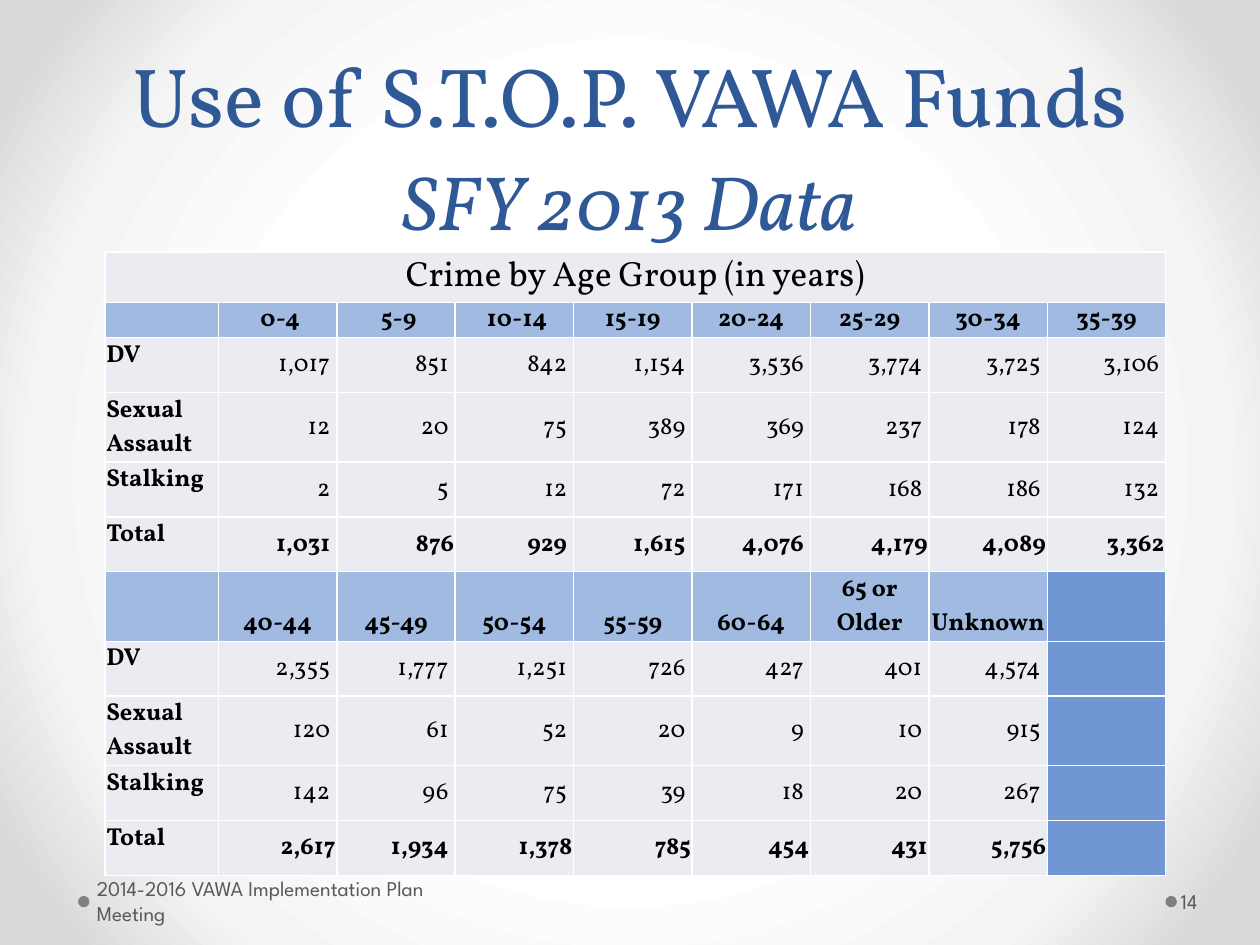
import lxml.etree
import pptx
import pptx.dml.color
import pptx.enum.shapes
import pptx.enum.text
import pptx.oxml.ns
import pptx.util

Pt = pptx.util.Pt
qn = pptx.oxml.ns.qn
ALIGN = pptx.enum.text.PP_ALIGN
ANCHOR = pptx.enum.text.MSO_ANCHOR

SERIF, SANS = "Vollkorn", "League Spartan"
BLUE, GREY, DOT = "2F5897", "595959", "808080"
HEAD, BODY, UNUSED = "A0BAE1", "EAECF2", "7097D3"
GRADIENT = [(50, "FFFFFF"), (76, "F4F4F4"), (92, "DADADA")]

TITLE = ["Use of S.T.O.P. VAWA Funds", "SFY 2013 Data"]
FOOTER = "2014-2016 VAWA Implementation Plan Meeting"
PAGE_NUMBER = "14"
CAPTION = "Crime by Age Group (in years)"
GROUPS = [
    {
        "ages": ["0-4", "5-9", "10-14", "15-19", "20-24", "25-29", "30-34", "35-39"],
        "rows": [
            ("DV", ["1,017", "851", "842", "1,154", "3,536", "3,774", "3,725", "3,106"]),
            ("Sexual Assault", ["12", "20", "75", "389", "369", "237", "178", "124"]),
            ("Stalking", ["2", "5", "12", "72", "171", "168", "186", "132"]),
            ("Total", ["1,031", "876", "929", "1,615", "4,076", "4,179", "4,089", "3,362"]),
        ],
        "shifted_ages": {1, 2, 3},
        "flush_totals": {2, 6, 7, 8},
    },
    {
        "ages": ["40-44", "45-49", "50-54", "55-59", "60-64", "65 or Older", "Unknown"],
        "rows": [
            ("DV", ["2,355", "1,777", "1,251", "726", "427", "401", "4,574"]),
            ("Sexual Assault", ["120", "61", "52", "20", "9", "10", "915"]),
            ("Stalking", ["142", "96", "75", "39", "18", "20", "267"]),
            ("Total", ["2,617", "1,934", "1,378", "785", "454", "431", "5,756"]),
        ],
        "shifted_ages": set(),
        "flush_totals": {1, 3, 4, 5, 6, 7},
    },
]
COLUMNS = [64.8] + [67.68] * 8
ONE_LINE, TWO_LINES = 31.3, 39.8
CRIME_ROWS = [ONE_LINE, TWO_LINES, ONE_LINE, ONE_LINE]
ROWS = [28.8, 20.2] + CRIME_ROWS + [TWO_LINES] + CRIME_ROWS
EDGE, INDENT = 0.72, 3.8


def color(value):
    """Turn a hex string into a colour."""
    return pptx.dml.color.RGBColor.from_string(value)


def add_span(para, text, size=14, font=SERIF, fill="000000", bold=False, italic=False):
    """Add one formatted run of text to a paragraph."""
    span = para.add_run()
    span.text = text
    span.font.size, span.font.name = Pt(size), font
    span.font.bold, span.font.italic = bold, italic
    span.font.color.rgb = color(fill)


def add_box(page, left, top, width, height, margins, anchor):
    """Add a wrapping text box and return its first paragraph."""
    frame = page.shapes.add_textbox(Pt(left), Pt(top), Pt(width), Pt(height)).text_frame
    frame.word_wrap, frame.vertical_anchor = True, anchor
    frame.margin_left, frame.margin_top, frame.margin_right, frame.margin_bottom = map(Pt, margins)
    return frame.paragraphs[0]


def add_dot(page, left, top):
    """Add a small footer dot."""
    dot = page.shapes.add_shape(
        pptx.enum.shapes.MSO_SHAPE.OVAL, Pt(left), Pt(top), Pt(6.5), Pt(6.5))
    dot.shadow.inherit = False
    dot.fill.solid()
    dot.fill.fore_color.rgb = color(DOT)
    dot.line.fill.background()


def paint_background(page):
    """Give the page a round gradient that darkens outwards."""
    add = lxml.etree.SubElement
    page.background.fill.gradient()
    gradient = page.background._cSld.find(".//" + qn("a:gradFill"))
    for child in list(gradient):
        gradient.remove(child)
    stops = add(gradient, qn("a:gsLst"))
    for position, shade in GRADIENT:
        stop = add(stops, qn("a:gs"), pos=str(position * 1000))
        add(stop, qn("a:srgbClr"), val=shade)
    shape = add(gradient, qn("a:path"), {"path": "circle"})
    add(shape, qn("a:fillToRect"), {side: "50000" for side in "ltrb"})


def format_cell(cell, fill):
    """Set a cell's fill, tight margins and thin white borders."""
    cell.fill.solid()
    cell.fill.fore_color.rgb = color(fill)
    cell.margin_left = cell.margin_right = cell.margin_top = Pt(EDGE)
    cell.margin_bottom = Pt(0)
    properties = cell._tc.get_or_add_tcPr()
    for index, side in enumerate("LRTB"):
        border = lxml.etree.Element(qn("a:ln" + side), w=str(Pt(1)))
        paint = lxml.etree.SubElement(border, qn("a:solidFill"))
        lxml.etree.SubElement(paint, qn("a:srgbClr"), val="FFFFFF")
        properties.insert(index, border)


def fill_cell(cell, text, align, anchor, left=EDGE, right=EDGE, **style):
    """Write text into a formatted cell."""
    cell.margin_left, cell.margin_right = Pt(left), Pt(right)
    cell.vertical_anchor = anchor
    para = cell.text_frame.paragraphs[0]
    para.alignment = align
    add_span(para, text, **style)


def fill_group(table, start, group):
    """Write one header row of ages and the crime rows below it."""
    for column, age in enumerate(group["ages"], 1):
        left = INDENT if column in group["shifted_ages"] else EDGE
        fill_cell(table.cell(start, column), age, ALIGN.CENTER, ANCHOR.BOTTOM,
                  left=left, bold=True)
    for row, (crime, counts) in enumerate(group["rows"], start + 1):
        total = crime == "Total"
        fill_cell(table.cell(row, 0), crime, ALIGN.LEFT, ANCHOR.TOP, bold=True)
        for column, count in enumerate(counts, 1):
            flush = total and column in group["flush_totals"]
            fill_cell(table.cell(row, column), count, ALIGN.RIGHT, ANCHOR.MIDDLE,
                      right=EDGE if flush else INDENT, bold=total)


def add_crime_table(page):
    """Add the table of crimes by age group."""
    table = page.shapes.add_table(
        len(ROWS), len(COLUMNS), Pt(60), Pt(144), Pt(sum(COLUMNS)), Pt(sum(ROWS))).table
    table.first_row = table.horz_banding = False
    for column, width in zip(table.columns, COLUMNS):
        column.width = Pt(width)
    for row, height in zip(table.rows, ROWS):
        row.height = Pt(height)
    starts = [1, 6]
    for row in range(len(ROWS)):
        for column in range(len(COLUMNS)):
            unused = row >= starts[1] and column == len(COLUMNS) - 1
            fill = UNUSED if unused else HEAD if row in starts else BODY
            format_cell(table.cell(row, column), fill)
    table.cell(0, 0).merge(table.cell(0, len(COLUMNS) - 1))
    fill_cell(table.cell(0, 0), CAPTION, ALIGN.CENTER, ANCHOR.BOTTOM, size=20)
    for start, group in zip(starts, GROUPS):
        fill_group(table, start, group)
    for cell in table.iter_cells():
        if not cell.text_frame.text:
            para = cell.text_frame.paragraphs[0]
            lxml.etree.SubElement(para._p, qn("a:endParaRPr"), sz="1400")


def main():
    """Build the slide and save it."""
    deck = pptx.Presentation()
    deck.slide_width, deck.slide_height = Pt(720), Pt(540)
    page = deck.slides.add_slide(deck.slide_layouts[6])
    paint_background(page)
    for left in (666, 44.6):
        add_dot(page, left, 512)

    title = add_box(page, 36, 36, 648, 108, (7.2, 3.6, 7.2, 3.6), ANCHOR.BOTTOM)
    title.alignment, title.line_spacing = ALIGN.CENTER, Pt(58)
    add_span(title, TITLE[0], size=48, fill=BLUE)
    title.add_line_break()
    add_span(title, TITLE[1], size=44, fill=BLUE, italic=True)

    for text, left, width, margins in [
        (FOOTER, 51.8, 224, (3.6, 3.6, 7.2, 3.6)),
        (PAGE_NUMBER, 672.5, 44, (2.2, 3.6, 3.6, 3.6)),
    ]:
        para = add_box(page, left, 500.4, width, 28.8, margins, ANCHOR.MIDDLE)
        add_span(para, text, size=12, font=SANS, fill=GREY)

    add_crime_table(page)
    deck.save("out.pptx")


if __name__ == "__main__":
    main()
